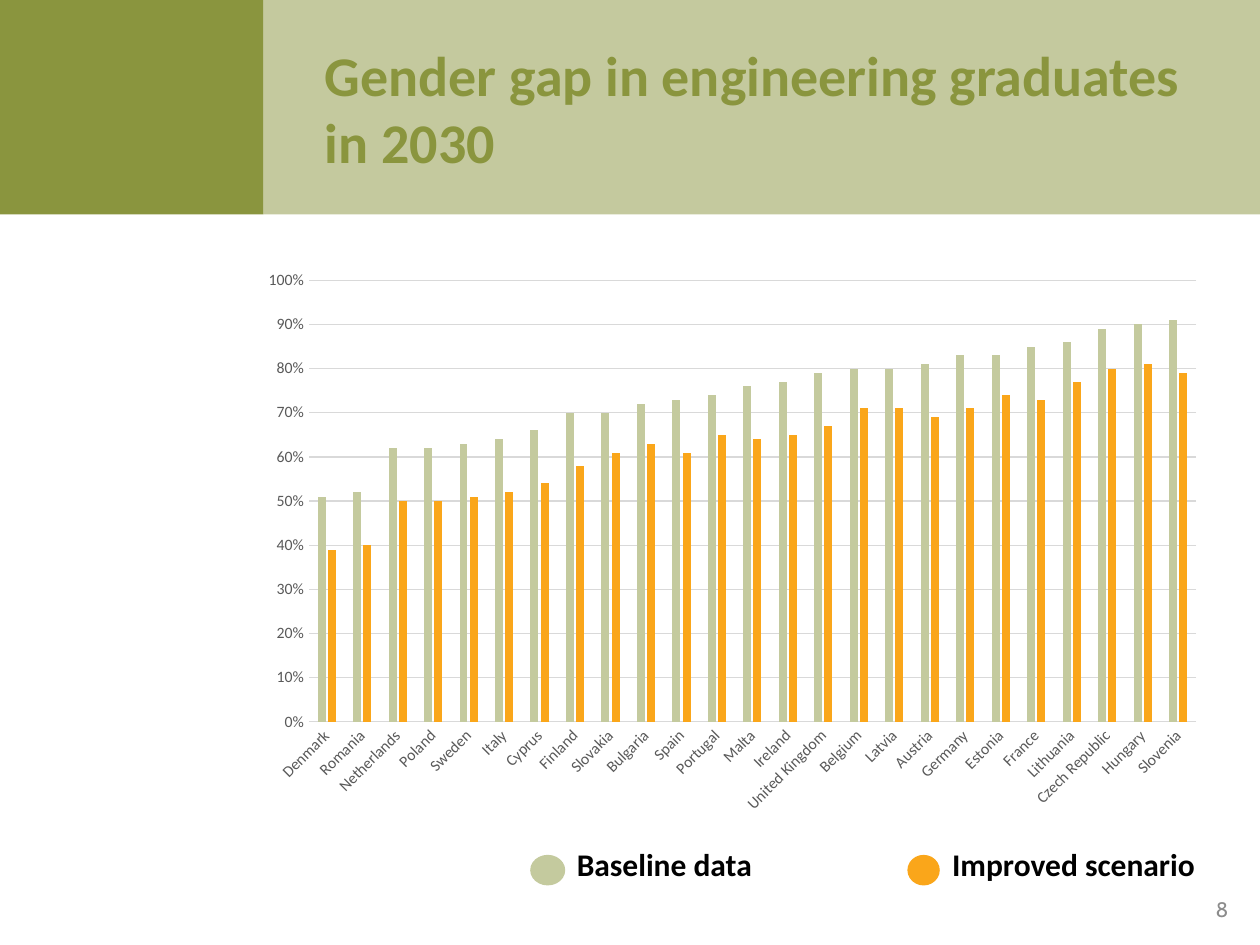
from lxml import etree
from pptx import Presentation
from pptx.chart.data import CategoryChartData
from pptx.dml.color import RGBColor
from pptx.enum import chart as charts, shapes, text
from pptx.oxml.ns import qn
from pptx.util import Pt

OLIVE = RGBColor(0x8A, 0x95, 0x3E)
SAGE = RGBColor(0xC4, 0xCA, 0x9E)
ORANGE = RGBColor(0xFA, 0xA6, 0x1A)
BLACK = RGBColor(0, 0, 0)
PAGE_GREY = RGBColor(0x8C, 0x8C, 0x8C)
LABEL_GREY = RGBColor(0x59, 0x59, 0x59)
GRID_GREY = RGBColor(0xD9, 0xD9, 0xD9)

GRADUATE_GAPS = [
    ("Denmark", 0.51, 0.39), ("Romania", 0.52, 0.40), ("Netherlands", 0.62, 0.50),
    ("Poland", 0.62, 0.50), ("Sweden", 0.63, 0.51), ("Italy", 0.64, 0.52),
    ("Cyprus", 0.66, 0.54), ("Finland", 0.70, 0.58), ("Slovakia", 0.70, 0.61),
    ("Bulgaria", 0.72, 0.63), ("Spain", 0.73, 0.61), ("Portugal", 0.74, 0.65),
    ("Malta", 0.76, 0.64), ("Ireland", 0.77, 0.65), ("United Kingdom", 0.79, 0.67),
    ("Belgium", 0.80, 0.71), ("Latvia", 0.80, 0.71), ("Austria", 0.81, 0.69),
    ("Germany", 0.83, 0.71), ("Estonia", 0.83, 0.74), ("France", 0.85, 0.73),
    ("Lithuania", 0.86, 0.77), ("Czech Republic", 0.89, 0.80),
    ("Hungary", 0.90, 0.81), ("Slovenia", 0.91, 0.79),
]

presentation = Presentation()
presentation.slide_width, presentation.slide_height = Pt(720), Pt(540)
slide = presentation.slides.add_slide(presentation.slide_layouts[6])


def add_filled_shape(kind, left, top, width, height, color):
    shape = slide.shapes.add_shape(kind, Pt(left), Pt(top), Pt(width), Pt(height))
    shape.shadow.inherit = False
    shape.fill.solid()
    shape.fill.fore_color.rgb = color
    shape.line.fill.background()
    return shape


def add_label(words, left, top, width, height, size, color, name="Calibri", bold=True):
    box = slide.shapes.add_textbox(Pt(left), Pt(top), Pt(width), Pt(height))
    box.text_frame.word_wrap = True
    run = box.text_frame.paragraphs[0].add_run()
    run.text = words
    run.font.size, run.font.name, run.font.bold = Pt(size), name, bold
    run.font.color.rgb = color
    return box.text_frame


# Header band
RECTANGLE = shapes.MSO_SHAPE.RECTANGLE
add_filled_shape(RECTANGLE, 0, 0, 150.5, 122.5, OLIVE)
band = add_filled_shape(RECTANGLE, 150.5, 0, 569.5, 122.5, OLIVE)
band_color = band._element.spPr.find(qn("a:solidFill")).find(qn("a:srgbClr"))
etree.SubElement(band_color, qn("a:alpha")).set("val", "50000")
title = add_label("Gender gap in engineering graduates in 2030",
                  178.5, 0, 508.5, 123, 32, OLIVE)
title.vertical_anchor = text.MSO_ANCHOR.MIDDLE

# Chart
chart_data = CategoryChartData(number_format="0%")
countries, baseline, improved = zip(*GRADUATE_GAPS)
chart_data.categories = countries
chart_data.add_series("Baseline data", baseline)
chart_data.add_series("Improved scenario", improved)
chart = slide.shapes.add_chart(
    charts.XL_CHART_TYPE.COLUMN_CLUSTERED,
    Pt(142.5), Pt(148.5), Pt(552), Pt(322.5), chart_data).chart
chart.has_title = False
chart.has_legend = False
chart.font.size, chart.font.name = Pt(10), "Calibri"
chart.font.color.rgb = BLACK

plot = chart.plots[0]
plot.gap_width, plot.overlap = 219, -27
plot.vary_by_categories = False
for series, color in zip(plot.series, (SAGE, ORANGE)):
    series.format.fill.solid()
    series.format.fill.fore_color.rgb = color

country_axis, share_axis = chart.category_axis, chart.value_axis
for axis in (country_axis, share_axis):
    axis.major_tick_mark = axis.minor_tick_mark = charts.XL_TICK_MARK.NONE
    font = axis.tick_labels.font
    font.size, font.name = Pt(9), "Calibri"
    font.color.rgb = LABEL_GREY
country_axis._element.find(qn("c:txPr")).find(qn("a:bodyPr")).set("rot", "-2700000")
share_axis.minimum_scale, share_axis.maximum_scale, share_axis.major_unit = 0, 1, 0.1
share_axis.tick_labels.number_format = "0%"
share_axis.tick_labels.number_format_is_linked = False
share_axis.format.line.fill.background()
for line in (country_axis.format.line, share_axis.major_gridlines.format.line):
    line.width = Pt(0.75)
    line.color.rgb = GRID_GREY

# Legend
for words, color, dot_left, dot_width, left, width in (
        ("Baseline data", SAGE, 303, 20, 322.5, 134),
        ("Improved scenario", ORANGE, 518.5, 18.5, 537, 164)):
    add_filled_shape(shapes.MSO_SHAPE.OVAL, dot_left, 488.5, dot_width, 17.5, color)
    add_label(words, left, 479.5, width, 26.5, 18, BLACK)

# Page number
page_number = add_label("8", 677.5, 508.5, 31.5, 22, 12, PAGE_GREY, "Cabin", False)
page_number.vertical_anchor = text.MSO_ANCHOR.MIDDLE
page_number.paragraphs[0].alignment = text.PP_ALIGN.RIGHT

presentation.save("out.pptx")
